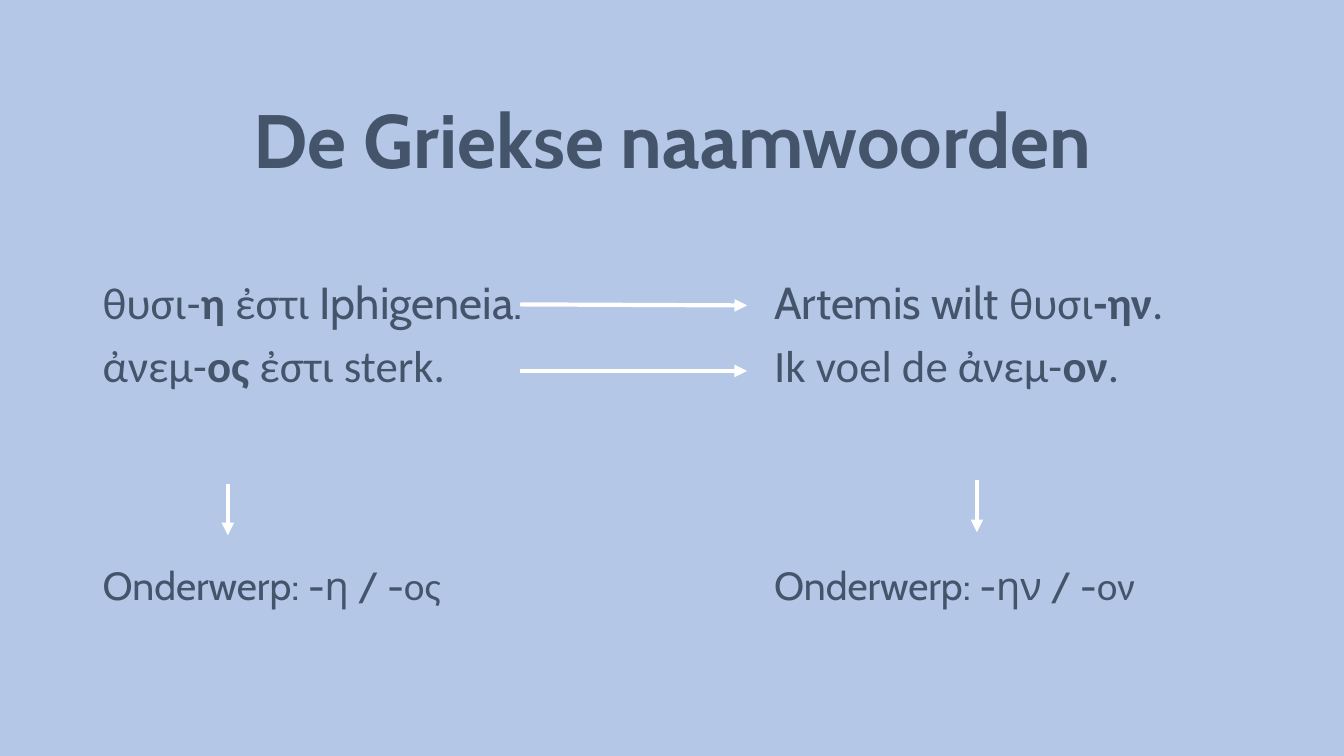
from lxml.etree import SubElement
from pptx import Presentation
from pptx.dml.color import RGBColor
from pptx.enum.shapes import MSO_CONNECTOR
from pptx.enum.text import MSO_ANCHOR, PP_ALIGN
from pptx.oxml.ns import qn
from pptx.util import Inches, Pt

COLORS = {"background": "B4C7E7", "text": "44546A", "arrow": "FFFFFF"}
LATIN, GREEK = "Cabin", "Calibri"
LEFT_COLUMN, RIGHT_COLUMN = 0.92, 7.58
SENTENCE_TOP, ENDING_TOP = 2.74, 5.52


def add_runs(paragraph, runs, size):
    """Append (text, font name, bold) runs in the text colour."""
    for text, font_name, bold in runs:
        run = paragraph.add_run()
        run.text = text
        run.font.name = font_name
        run.font.bold = bold
        run.font.size = Pt(size)
        run.font.color.rgb = RGBColor.from_string(COLORS["text"])


def add_text(left, top, width, height, lines, size, line_spacing):
    box = slide.shapes.add_textbox(Inches(left), Inches(top), Inches(width), Inches(height))
    frame = box.text_frame
    frame.word_wrap = True
    for index, runs in enumerate(lines):
        paragraph = frame.add_paragraph() if index else frame.paragraphs[0]
        paragraph.line_spacing = line_spacing
        if index:
            paragraph.space_before = Pt(10)
        add_runs(paragraph, runs, size)


presentation = Presentation()
presentation.slide_width = Inches(13.33)
presentation.slide_height = Inches(7.5)
slide = presentation.slides.add_slide(presentation.slide_layouts[5])
slide.background.fill.solid()
slide.background.fill.fore_color.rgb = RGBColor.from_string(COLORS["background"])

# Title, set low in its box
title = slide.shapes.title
title.left, title.top = Inches(LEFT_COLUMN), Inches(0.4)
title.width, title.height = Inches(11.5), Inches(1.45)
title.text_frame.vertical_anchor = MSO_ANCHOR.MIDDLE
title.text_frame.margin_top = Inches(0.65)
title_paragraph = title.text_frame.paragraphs[0]
title_paragraph.alignment = PP_ALIGN.CENTER
title_paragraph.line_spacing = 0.9
add_runs(title_paragraph, [("De Griekse naamwoorden", LATIN, True)], 54)

# Example sentences: subject on the left, object on the right
subject_sentences = [
    [("θυσι-", GREEK, False), ("η", GREEK, True), (" ἐστι ", GREEK, False),
     ("Iphigeneia.", LATIN, False)],
    [("ἀνεμ-", GREEK, False), ("ος", GREEK, True), (" ἐστι sterk.", GREEK, False)],
]
object_sentences = [
    [("Artemis wilt ", LATIN, False), ("θυσι", GREEK, False), ("-ην", GREEK, True),
     (".", GREEK, False)],
    [("Ik voel de ἀνεμ-", GREEK, False), ("ον", GREEK, True), (".", GREEK, False)],
]
add_text(LEFT_COLUMN, SENTENCE_TOP, 5.64, 4.03, subject_sentences, 32, 0.9)
add_text(RIGHT_COLUMN, SENTENCE_TOP, 5.67, 4.03, object_sentences, 32, 0.9)

# Endings below each column
for left, width, first_ending, second_ending in [
    (LEFT_COLUMN, 3.65, "η", "ος"),
    (RIGHT_COLUMN, 3.86, "ην", "ον"),
]:
    ending_runs = [(f"Onderwerp: -{first_ending} / -", LATIN, False),
                   (second_ending, GREEK, False)]
    add_text(left, ENDING_TOP, width, 0.57, [ending_runs], 28, 1.0)

# Arrows between the columns and down to the endings
for ends in [
    (5.16, 3.02, 7.41, 3.03),
    (5.16, 3.68, 7.41, 3.68),
    (2.26, 4.8, 2.26, 5.31),
    (9.69, 4.76, 9.69, 5.28),
]:
    arrow = slide.shapes.add_connector(MSO_CONNECTOR.STRAIGHT, *map(Inches, ends))
    arrow.line.width = Pt(3)
    arrow.line.color.rgb = RGBColor.from_string(COLORS["arrow"])
    SubElement(arrow.line._get_or_add_ln(), qn("a:tailEnd"), type="triangle")
    SubElement(arrow._element.spPr, qn("a:effectLst"))

presentation.save("out.pptx")
